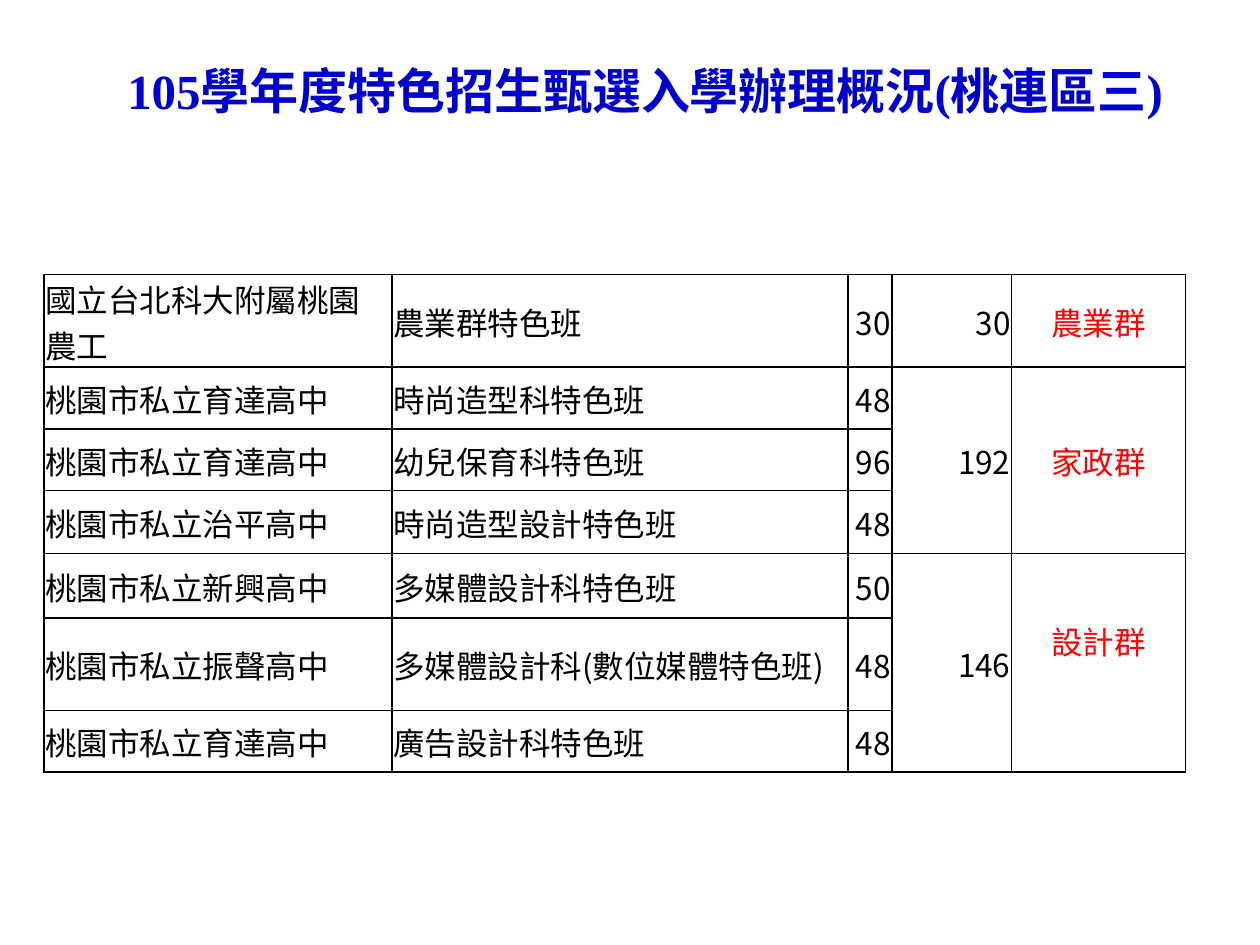
from lxml.etree import SubElement
from pptx import Presentation
from pptx.dml.color import RGBColor
from pptx.enum.text import MSO_ANCHOR, MSO_AUTO_SIZE, PP_ALIGN
from pptx.oxml.ns import qn
from pptx.util import Inches, Pt

BLUE = RGBColor(0x00, 0x00, 0xCC)
BLACK = RGBColor(0x00, 0x00, 0x00)
RED = RGBColor(0xFF, 0x00, 0x00)
TITLE_FONT = "Times New Roman"
TABLE_FONT = "Noto Sans CJK SC"

COLUMN_WIDTHS = (2.76, 3.62, 0.35, 0.95, 1.38)
ROW_HEIGHTS = (0.71, 0.49, 0.49, 0.5, 0.51, 0.49, 0.49)
COLUMN_ALIGNS = (PP_ALIGN.LEFT, PP_ALIGN.LEFT, PP_ALIGN.RIGHT, PP_ALIGN.RIGHT, PP_ALIGN.CENTER)
TOTAL_COLUMN, GROUP_COLUMN = 3, 4

GROUPS = (
    ("農業群", "30", (("國立台北科大附屬桃園農工", "農業群特色班", "30"),)),
    ("家政群", "192", (
        ("桃園市私立育達高中", "時尚造型科特色班", "48"),
        ("桃園市私立育達高中", "幼兒保育科特色班", "96"),
        ("桃園市私立治平高中", "時尚造型設計特色班", "48"),
    )),
    ("設計群", "146", (
        ("桃園市私立新興高中", "多媒體設計科特色班", "50"),
        ("桃園市私立振聲高中", "多媒體設計科(數位媒體特色班)", "48"),
        ("桃園市私立育達高中", "廣告設計科特色班", "48"),
    )),
)


class SlideBuilder:
    def __init__(self, slide):
        self.slide = slide

    def title(self, text, left, top, width, height):
        title = self.slide.shapes.title
        title.left, title.top = Inches(left), Inches(top)
        title.width, title.height = Inches(width), Inches(height)
        frame = title.text_frame
        frame.text = text
        frame.word_wrap = True
        frame.auto_size = MSO_AUTO_SIZE.NONE
        frame.vertical_anchor = MSO_ANCHOR.MIDDLE
        heading = frame.paragraphs[0]
        heading.alignment = PP_ALIGN.CENTER
        self.style(heading, TITLE_FONT, 28, BLUE, bold=True)

    def style(self, paragraph, name, size, color, bold=False):
        font = paragraph.font
        font.name, font.size, font.bold = name, Pt(size), bold
        font.color.rgb = color

    def borders(self, cell):
        properties = cell._tc.get_or_add_tcPr()
        for index, side in enumerate(("lnL", "lnR", "lnT", "lnB")):
            line = properties.makeelement(qn(f"a:{side}"), {"w": str(Pt(1))})
            fill = SubElement(line, qn("a:solidFill"))
            SubElement(fill, qn("a:srgbClr"), val=str(BLACK))
            properties.insert(index, line)

    def cell(self, cell, text, align, color):
        cell.margin_left = cell.margin_right = cell.margin_top = Inches(0.01)
        cell.margin_bottom = 0
        cell.vertical_anchor = MSO_ANCHOR.MIDDLE
        cell.text = text
        entry = cell.text_frame.paragraphs[0]
        entry.alignment = align
        self.style(entry, TABLE_FONT, 18, color)
        typeface = entry._p.pPr.find(qn("a:defRPr")).find(qn("a:latin"))
        typeface.addnext(typeface.makeelement(qn("a:ea"), {"typeface": TABLE_FONT}))

    def table(self, groups, left, top):
        table = self.slide.shapes.add_table(
            len(ROW_HEIGHTS), len(COLUMN_WIDTHS), Inches(left), Inches(top),
            Inches(sum(COLUMN_WIDTHS)), Inches(sum(ROW_HEIGHTS))).table
        table.first_row = table.horz_banding = False
        for column, width in zip(table.columns, COLUMN_WIDTHS):
            column.width = Inches(width)
        for row, height in zip(table.rows, ROW_HEIGHTS):
            row.height = Inches(height)
        for cell in table.iter_cells():
            cell.fill.background()
            self.borders(cell)

        first = 0
        for group, total, classes in groups:
            last = first + len(classes) - 1
            for row, values in enumerate(classes, first):
                for column, value in enumerate(values):
                    self.cell(table.cell(row, column), value, COLUMN_ALIGNS[column], BLACK)
            for column, value, color in ((TOTAL_COLUMN, total, BLACK), (GROUP_COLUMN, group, RED)):
                merged = table.cell(first, column)
                if last > first:
                    merged.merge(table.cell(last, column))
                self.cell(merged, value, COLUMN_ALIGNS[column], color)
            first = last + 1
        return table


def main():
    presentation = Presentation()
    presentation.slide_width, presentation.slide_height = Inches(10), Inches(7.5)
    builder = SlideBuilder(presentation.slides.add_slide(presentation.slide_layouts[5]))
    builder.title("105學年度特色招生甄選入學辦理概況(桃連區三)", 0.75, 0.36, 8.74, 0.71)
    admissions = builder.table(GROUPS, 0.35, 2.18)
    design_group = admissions.cell(4, GROUP_COLUMN)
    design_group.margin_bottom = Inches(0.36)
    presentation.save("out.pptx")


if __name__ == "__main__":
    main()
